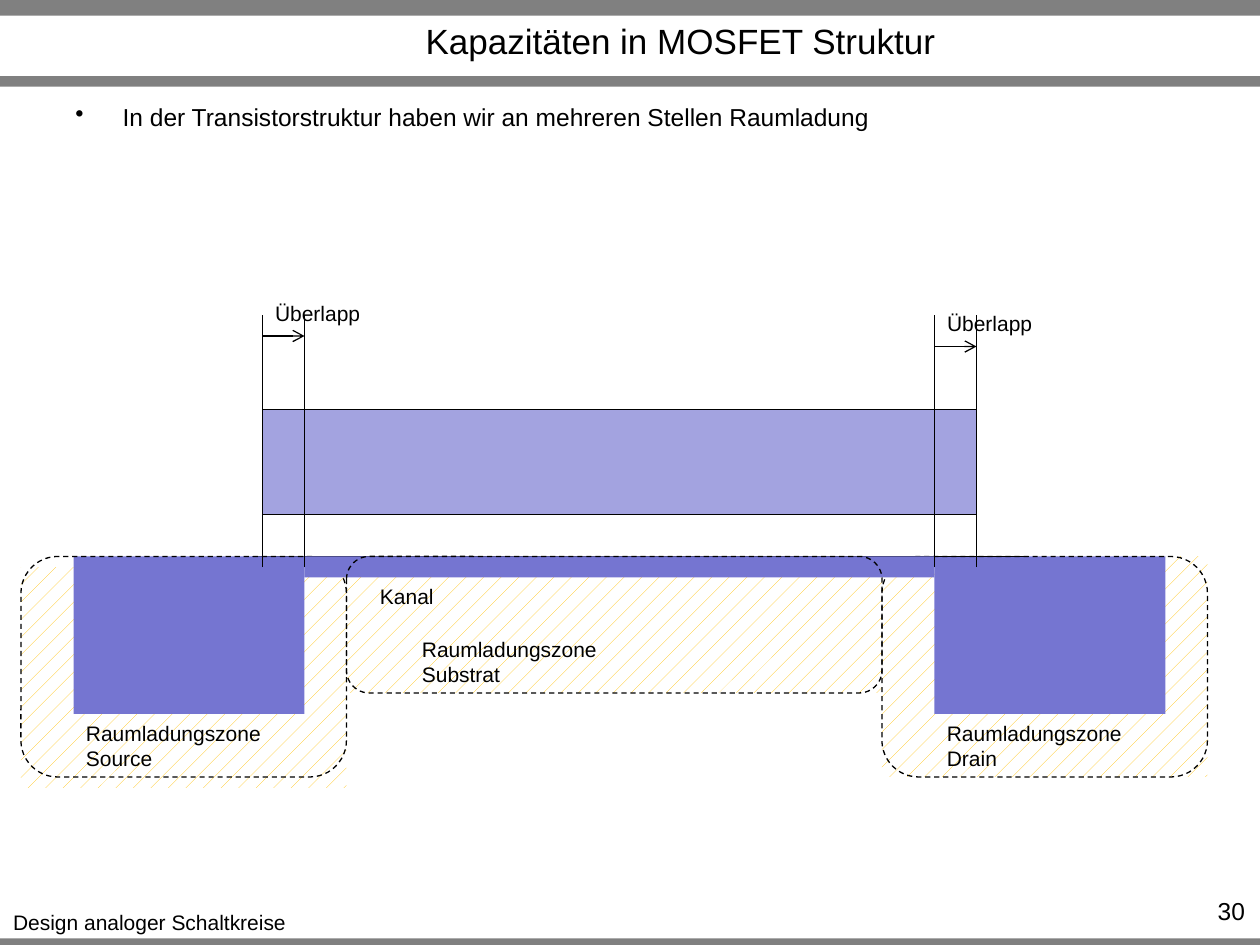
from typing import NamedTuple

from lxml.etree import SubElement
from pptx import Presentation
from pptx.dml.color import RGBColor
from pptx.enum.dml import MSO_LINE, MSO_PATTERN
from pptx.enum.shapes import MSO_CONNECTOR, MSO_SHAPE as Shape
from pptx.enum.text import MSO_ANCHOR as Anchor, MSO_AUTO_SIZE as AutoSize, PP_ALIGN as Align
from pptx.oxml.ns import qn
from pptx.util import Emu, Pt

PX = 9525  # 96 px to the inch; the drawing sits on a grid of 8 px
BLACK, WHITE, GREY = "000000", "FFFFFF", "808080"
DOPED, GATE, HATCH = "7575D1", "A3A3E0", "FFC000"


class Area(NamedTuple):
    left: int
    top: int
    width: int
    height: int


class Line(NamedTuple):
    x1: int
    y1: int
    x2: int
    y2: int
    arrow: bool = False


def px(*lengths: int) -> list[Emu]:
    return [Emu(length * PX) for length in lengths]


def color(value: str) -> RGBColor:
    return RGBColor.from_string(value)


def add_block(area: Area, fill: str = "", line: str = "", kind=Shape.RECTANGLE,
              dashed: bool = False, hatched: bool = False) -> None:
    block = page.shapes.add_shape(kind, *px(*area))
    block.shadow.inherit = False
    if hatched:
        block.fill.patterned()
        block.fill.pattern = MSO_PATTERN.PERCENT_5
        block.fill.fore_color.rgb = color(fill)
        block.fill.back_color.rgb = color(WHITE)
    elif fill:
        block.fill.solid()
        block.fill.fore_color.rgb = color(fill)
    else:
        block.fill.background()
    if line:
        block.line.color.rgb = color(line)
        block.line.width = Pt(0.75)
        if dashed:
            block.line.dash_style = MSO_LINE.DASH
    else:
        block.line.fill.background()


def add_hatch(area: Area) -> None:
    add_block(area, HATCH, kind=Shape.FLOWCHART_PROCESS, hatched=True)


def add_outline(area: Area) -> None:
    add_block(area, line=BLACK, kind=Shape.ROUNDED_RECTANGLE, dashed=True)


def add_line(line: Line) -> None:
    ends = px(line.x1, line.y1, line.x2, line.y2)
    connector = page.shapes.add_connector(MSO_CONNECTOR.STRAIGHT, *ends)
    connector.line.color.rgb = color(BLACK)
    connector.line.width = Pt(0.75)
    if line.arrow:
        SubElement(connector.line._get_or_add_ln(), qn("a:tailEnd"), type="arrow")
    SubElement(connector._element.spPr, qn("a:effectLst"))


def add_text(area: Area, text: str, size: int = 12, align=Align.LEFT,
             anchor=Anchor.TOP, wrap: bool = False, bullet: str = "") -> None:
    box = page.shapes.add_textbox(*px(*area))
    frame = box.text_frame
    frame.word_wrap = wrap
    frame.auto_size = AutoSize.NONE if wrap else AutoSize.SHAPE_TO_FIT_TEXT
    frame.vertical_anchor = anchor
    for number, words in enumerate(text.split("\n")):
        para = frame.add_paragraph() if number else frame.paragraphs[0]
        para.alignment = align
        if bullet:
            props = para._p.get_or_add_pPr()
            props.set("marL", str(36 * PX))
            props.set("indent", str(-36 * PX))
            SubElement(props, qn("a:buChar"), char=bullet)
        span = para.add_run()
        span.text = words
        span.font.name = "Arial"
        span.font.size = Pt(size)
        span.font.color.rgb = color(BLACK)


deck = Presentation()
deck.slide_width, deck.slide_height = px(960, 720)
page = deck.slides.add_slide(deck.slide_layouts[6])

# Frame bars, footer and heading
for top, height in [(715, 8), (0, 12), (58, 8)]:
    add_block(Area(0, top, 960, height), GREY)
add_text(Area(0, 688, 228, 29), "Design analoger Schaltkreise", align=Align.CENTER)
add_text(Area(125, 13, 787, 36), "Kapazitäten in MOSFET Struktur", size=20,
         align=Align.CENTER, anchor=Anchor.MIDDLE, wrap=True)
add_text(Area(48, 73, 864, 47),
         "In der Transistorstruktur haben wir an mehreren Stellen Raumladung",
         size=14, wrap=True, bullet="•")
add_text(Area(874, 678, 84, 23), "30", size=14, align=Align.RIGHT, wrap=True)

# Key positions of the transistor
SURFACE = 424
GATE_LEFT, SOURCE_EDGE, DRAIN_EDGE, GATE_RIGHT = 200, 232, 712, 744
substrate_zone = Area(264, SURFACE, 408, 104)
drain_zone = Area(672, SURFACE, 248, 168)
source_zone = Area(16, SURFACE, 248, 168)

# Substrate and drain, with the gate above
add_hatch(substrate_zone)
add_hatch(drain_zone)
add_block(Area(DRAIN_EDGE, SURFACE, 176, 120), DOPED)
add_block(Area(GATE_LEFT, 312, GATE_RIGHT - GATE_LEFT, 80), GATE, BLACK)
add_text(Area(280, 440, 60, 29), "Kanal", align=Align.CENTER)
add_text(Area(DRAIN_EDGE, 544, 154, 48), "Raumladungszone\nDrain")
add_outline(drain_zone)
add_line(Line(192, SURFACE, 784, SURFACE))

# Source
add_hatch(source_zone._replace(top=SURFACE + 8))
add_block(Area(56, SURFACE, 176, 120), DOPED)
add_outline(source_zone)
add_text(Area(56, 544, 154, 48), "Raumladungszone\nSource")

# Channel
add_block(Area(SOURCE_EDGE, SURFACE, DRAIN_EDGE - SOURCE_EDGE, 16), DOPED)
add_outline(substrate_zone)
add_text(Area(312, 480, 154, 48), "Raumladungszone\nSubstrat")

# Overlap of the gate with drain and source
for x in (DRAIN_EDGE, GATE_RIGHT, SOURCE_EDGE, GATE_LEFT):
    add_line(Line(x, 432, x, 240))
for start, end, y in [(DRAIN_EDGE, GATE_RIGHT, 264), (GATE_LEFT, SOURCE_EDGE, 256)]:
    add_line(Line(start, y, end, y, arrow=True))
    add_text(Area(start, y - 32, 84, 29), "Überlapp", align=Align.CENTER)

deck.save("out.pptx")
